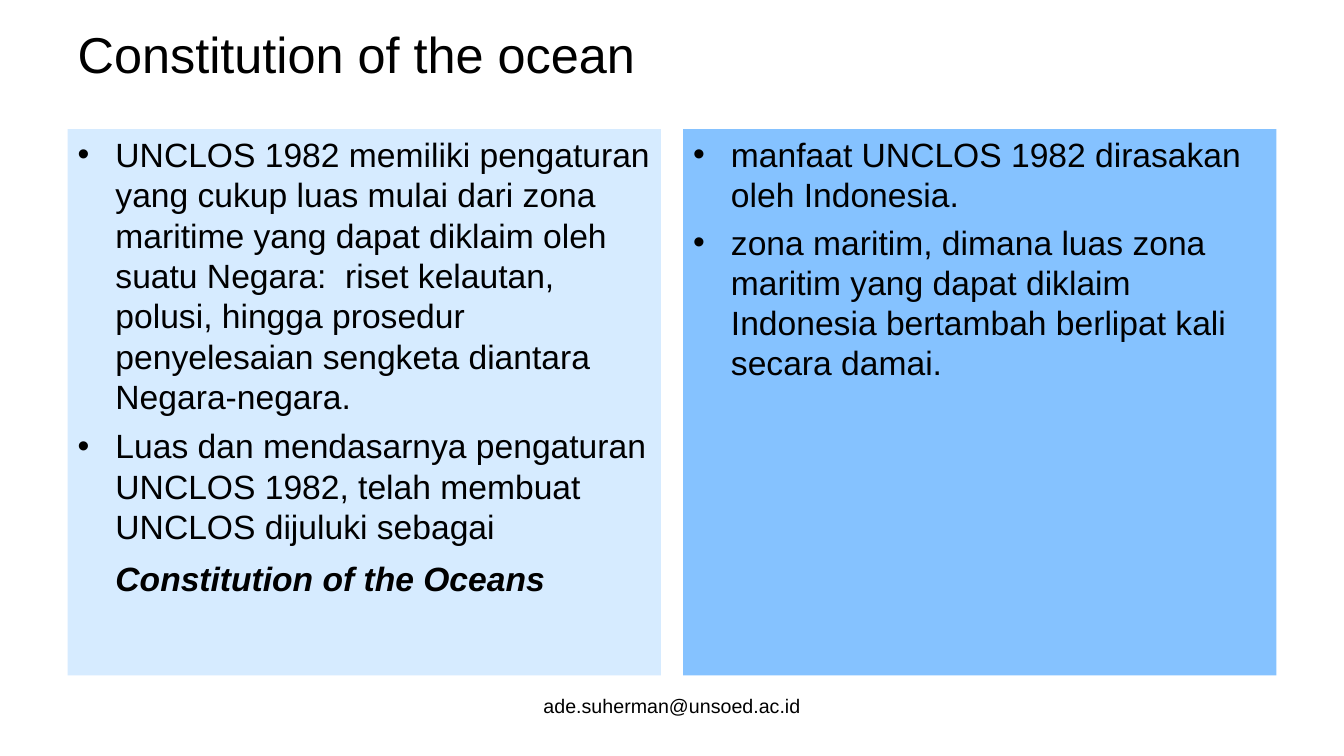
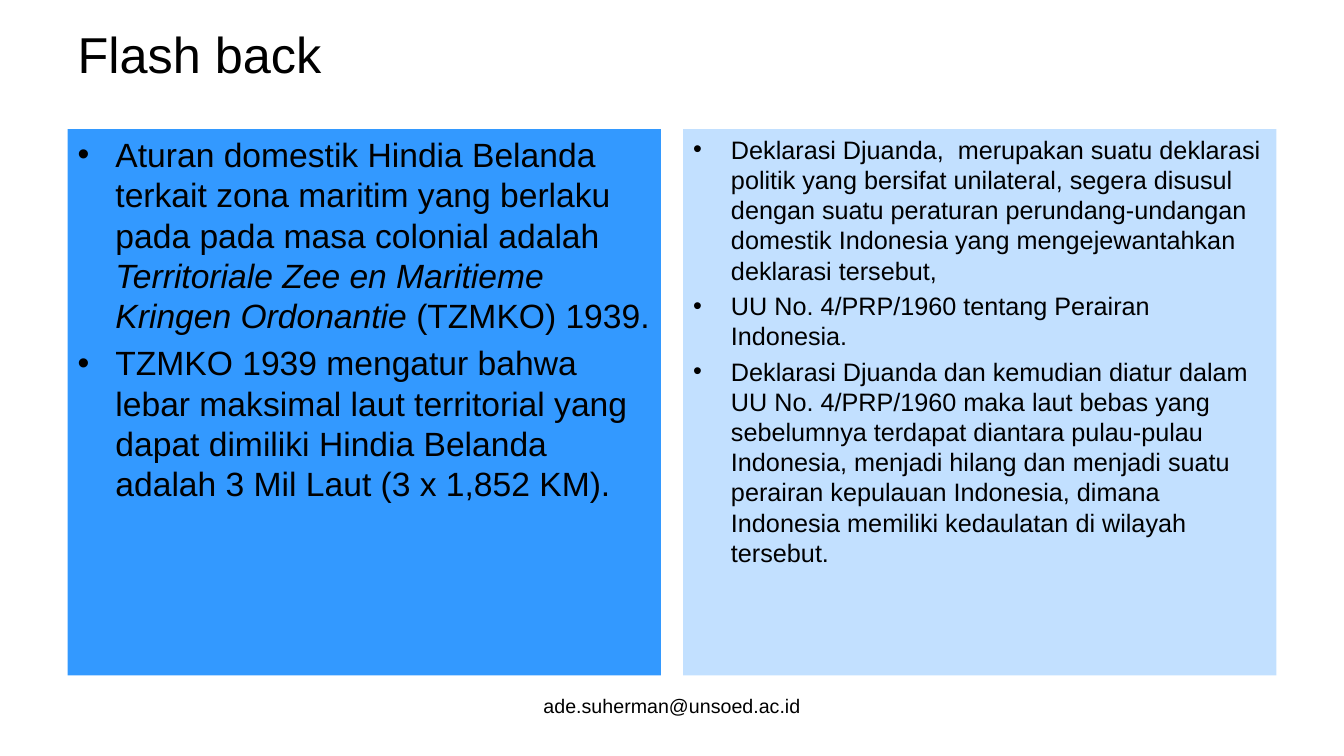
import pptx
import pptx.util
import pptx.dml.color
import pptx.enum.text
from dataclasses import dataclass


@dataclass(frozen=True)
class Theme:
    font: str = "Arial"
    ink: str = "000000"
    mist: str = "D6EBFF"
    pale: str = "C2E0FF"
    sky: str = "85C2FF"
    azure: str = "3399FF"
    title_size: int = 36
    body_size: int = 24
    dense_size: int = 18
    footer_size: int = 14
    end_size: int = 32


THEME = Theme()
WIDTH, HEIGHT = 13.33, 7.5
MARGIN = 0.67
GAP = 0.22
COLUMN = (WIDTH - 2 * MARGIN - GAP) / 2
TWO_CONTENT = 3
CONTACT = "ade.suherman@unsoed.ac.id"


class Deck:
    """Holds the style and the slide being built."""

    def __init__(self, theme):
        self.theme = theme
        self.presentation = pptx.Presentation()
        self.presentation.slide_width = pptx.util.Inches(WIDTH)
        self.presentation.slide_height = pptx.util.Inches(HEIGHT)
        self.slide = None

    def start(self, heading):
        layout = self.presentation.slide_layouts[TWO_CONTENT]
        self.slide = self.presentation.slides.add_slide(layout)
        self.title(heading)
        self.footer()

    def place(self, part, left, top, width, height):
        part.left, part.top, part.width, part.height = map(
            pptx.util.Inches, (left, top, width, height))

    def style(self, run, size, bold=None, italic=None):
        run.font.name = self.theme.font
        run.font.size = pptx.util.Pt(size)
        run.font.color.rgb = pptx.dml.color.RGBColor.from_string(self.theme.ink)
        run.font.bold, run.font.italic = bold, italic

    def line(self, frame, text, size, align):
        frame.text = text
        frame.word_wrap = True
        frame.auto_size = pptx.enum.text.MSO_AUTO_SIZE.NONE
        frame.paragraphs[0].alignment = align
        self.style(frame.paragraphs[0].runs[0], size)

    def title(self, heading):
        title = self.slide.shapes.title
        self.place(title, MARGIN, 0.21, WIDTH - 2 * MARGIN, 0.64)
        title.text_frame.vertical_anchor = pptx.enum.text.MSO_ANCHOR.MIDDLE
        self.line(title.text_frame, heading, self.theme.title_size,
                  pptx.enum.text.PP_ALIGN.LEFT)

    def footer(self):
        width = 4.22
        contact = self.slide.shapes.add_textbox(0, 0, 0, 0)
        self.place(contact, (WIDTH - width) / 2, 6.83, width, 0.52)
        self.line(contact.text_frame, CONTACT, self.theme.footer_size,
                  pptx.enum.text.PP_ALIGN.CENTER)

    def panel(self, column, fill, bullets, size=None):
        """Fill a column; a bullet is a list of (text, format) pieces."""
        panel = self.slide.placeholders[column + 1]
        self.place(panel, MARGIN + column * (COLUMN + GAP), 1.28, COLUMN, 5.42)
        panel.fill.solid()
        panel.fill.fore_color.rgb = pptx.dml.color.RGBColor.from_string(fill)
        frame = panel.text_frame
        frame.auto_size = pptx.enum.text.MSO_AUTO_SIZE.NONE
        for index, pieces in enumerate(bullets):
            paragraph = frame.add_paragraph() if index else frame.paragraphs[0]
            if index == 0:
                paragraph.space_before = pptx.util.Pt(0)
            for text, look in pieces:
                run = paragraph.add_run()
                run.text = text
                self.style(run, **{"size": size or self.theme.body_size, **look})


def plain(text):
    return [(text, {})]


def main():
    deck = Deck(THEME)

    # The convention and its benefits
    deck.start("Constitution of the ocean")
    deck.panel(0, THEME.mist, [
        plain("UNCLOS 1982 memiliki pengaturan yang cukup luas mulai dari zona "
              "maritime yang dapat diklaim oleh suatu Negara:  riset kelautan, "
              "polusi, hingga prosedur penyelesaian sengketa diantara "
              "Negara-negara."),
        [("Luas dan mendasarnya pengaturan UNCLOS 1982, telah membuat "
          "UNCLOS dijuluki sebagai ", {}),
         ("Constitution of the Oceans", {"bold": True, "italic": True}),
         (" ", {"size": THEME.end_size, "bold": True, "italic": True})],
    ])
    deck.panel(1, THEME.sky, [
        plain("manfaat UNCLOS 1982 dirasakan oleh Indonesia."),
        plain("zona maritim, dimana luas zona maritim yang dapat diklaim "
              "Indonesia bertambah berlipat kali secara damai."),
    ])

    # Colonial rules and the declaration that replaced them
    deck.start("Flash back")
    deck.panel(0, THEME.azure, [
        [("Aturan domestik Hindia Belanda terkait zona maritim yang berlaku "
          "pada pada masa colonial adalah ", {}),
         ("Territoriale Zee en Maritieme Kringen Ordonantie ", {"italic": True}),
         ("(TZMKO) 1939.", {})],
        plain("TZMKO 1939 mengatur bahwa lebar maksimal laut territorial yang "
              "dapat dimiliki Hindia Belanda adalah 3 Mil Laut (3 x 1,852 KM)."),
    ])
    deck.panel(1, THEME.pale, [
        plain("Deklarasi Djuanda,  merupakan suatu deklarasi politik yang "
              "bersifat unilateral, segera disusul dengan suatu peraturan "
              "perundang-undangan domestik Indonesia yang mengejewantahkan "
              "deklarasi tersebut,"),
        plain("UU No. 4/PRP/1960 tentang Perairan Indonesia."),
        plain("Deklarasi Djuanda dan kemudian diatur dalam UU No. 4/PRP/1960 "
              "maka laut bebas yang sebelumnya terdapat diantara pulau-pulau "
              "Indonesia, menjadi hilang dan menjadi suatu perairan kepulauan "
              "Indonesia, dimana Indonesia memiliki kedaulatan di wilayah "
              "tersebut."),
    ], THEME.dense_size)

    deck.presentation.save("out.pptx")


if __name__ == "__main__":
    main()
